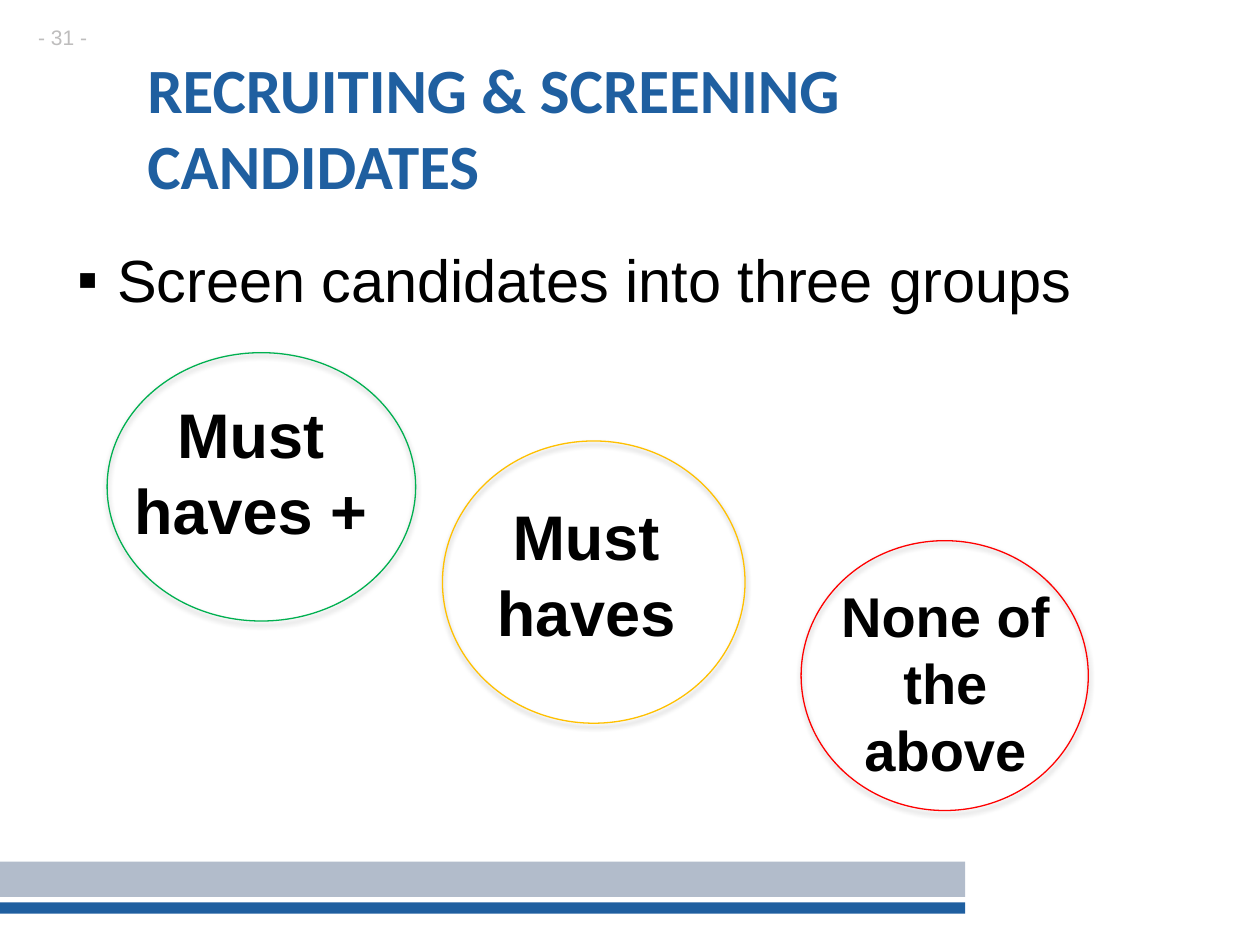
import dataclasses

import lxml.etree
import pptx
import pptx.dml.color
import pptx.enum.shapes
import pptx.enum.text
import pptx.oxml
import pptx.oxml.ns
import pptx.util

Cm = pptx.util.Cm
Pt = pptx.util.Pt
Align = pptx.enum.text.PP_ALIGN
Anchor = pptx.enum.text.MSO_ANCHOR
AutoSize = pptx.enum.text.MSO_AUTO_SIZE
Preset = pptx.enum.shapes.MSO_SHAPE


@dataclasses.dataclass(frozen=True)
class Theme:
    heading_font: str = "Calibri"
    body_font: str = "Arial"
    blue: str = "1F5FA0"
    grey_blue: str = "B2BCCB"
    pale_grey: str = "BEBDBD"
    black: str = "000000"
    green: str = "00B050"
    amber: str = "FFC000"
    red: str = "FF0000"
    heading_size: int = 36
    list_size: int = 34
    group_size: int = 36
    small_group_size: int = 32
    number_size: int = 12


THEME = Theme()


def colour(value):
    return pptx.dml.color.RGBColor.from_string(value)


def place(shape, box):
    shape.left, shape.top, shape.width, shape.height = (Cm(length) for length in box)


def set_frame(text_frame, anchor, margins):
    text_frame.word_wrap = True
    text_frame.auto_size = AutoSize.NONE
    text_frame.vertical_anchor = anchor
    (text_frame.margin_left, text_frame.margin_top,
     text_frame.margin_right, text_frame.margin_bottom) = (Cm(margin) for margin in margins)


def format_paragraph(paragraph, alignment, font_name, size, text_colour, bold=False):
    paragraph.alignment = alignment
    paragraph.space_before = Pt(0)
    for run in paragraph.runs:
        run.font.name = font_name
        run.font.size = Pt(size)
        run.font.bold = bold
        run.font.color.rgb = colour(text_colour)


def add_page_number(slide, box, text):
    shape = slide.shapes.add_textbox(*(Cm(length) for length in box))
    set_frame(shape.text_frame, Anchor.MIDDLE, (0, 0, 0, 0.13))
    shape.text_frame.text = text
    format_paragraph(shape.text_frame.paragraphs[0], Align.CENTER, THEME.body_font,
                     THEME.number_size, THEME.pale_grey)


def add_footer_bars(slide, box):
    left, top, width, height = box
    bars = ((0, 0.71, THEME.grey_blue), (height - 0.23, 0.23, THEME.blue))
    for offset, thickness, fill in bars:
        bar = slide.shapes.add_shape(Preset.RECTANGLE, Cm(left), Cm(top + offset),
                                     Cm(width), Cm(thickness))
        bar.shadow.inherit = False
        bar.fill.solid()
        bar.fill.fore_color.rgb = colour(fill)
        bar.line.fill.background()


def fill_title(slide, box, text):
    title = slide.shapes.title
    place(title, box)
    set_frame(title.text_frame, Anchor.TOP, (0, 0, 0.25, 0.13))
    title.text_frame.text = text
    format_paragraph(title.text_frame.paragraphs[0], Align.LEFT, THEME.heading_font,
                     THEME.heading_size, THEME.blue, bold=True)


def fill_list(slide, box, items):
    body = slide.placeholders[1]
    place(body, box)
    set_frame(body.text_frame, Anchor.TOP, (0, 0, 0.25, 0.13))
    body.text_frame.text = "\n".join(items)
    for paragraph in body.text_frame.paragraphs:
        properties = paragraph._p.get_or_add_pPr()
        properties.set("marL", str(Cm(0.79)))
        properties.set("indent", str(-Cm(0.79)))
        bullet = lxml.etree.SubElement(properties, pptx.oxml.ns.qn("a:buChar"))
        bullet.set("char", "▪")
        paragraph.line_spacing = 1.5
        format_paragraph(paragraph, Align.LEFT, THEME.body_font, THEME.list_size, THEME.black)


def add_soft_shadow(shape):
    effects = pptx.oxml.parse_xml(
        f'<a:effectLst {pptx.oxml.ns.nsdecls("a")}>'
        f'<a:outerShdw blurRad="{Pt(3.1)}" dist="{Pt(1.8)}" dir="5400000" rotWithShape="0">'
        f'<a:srgbClr val="{THEME.black}"><a:alpha val="35000"/></a:srgbClr>'
        '</a:outerShdw></a:effectLst>')
    shape.shadow.inherit = False
    empty_effects = shape._element.spPr.find(pptx.oxml.ns.qn("a:effectLst"))
    empty_effects.getparent().replace(empty_effects, effects)


def add_candidate_group(slide, box, label_box, text, outline, size):
    left, top, width, height = box
    label_left, label_top, label_width, label_height = label_box
    group = slide.shapes.add_group_shape()

    circle = group.shapes.add_shape(Preset.OVAL, Cm(left), Cm(top), Cm(width), Cm(height))
    circle.fill.background()
    circle.line.color.rgb = colour(outline)
    circle.line.width = Pt(0.75)
    add_soft_shadow(circle)

    label = group.shapes.add_textbox(Cm(left + label_left), Cm(top + label_top),
                                     Cm(label_width), Cm(label_height))
    label.text_frame.word_wrap = True
    label.text_frame.auto_size = AutoSize.SHAPE_TO_FIT_TEXT
    label.text_frame.text = text
    format_paragraph(label.text_frame.paragraphs[0], Align.CENTER, THEME.body_font,
                     size, THEME.black, bold=True)


def main():
    presentation = pptx.Presentation()
    presentation.slide_width = Cm(25.4)
    presentation.slide_height = Cm(19.05)
    slide = presentation.slides.add_slide(presentation.slide_layouts[1])

    add_page_number(slide, (0.48, 0.46, 1.57, 0.69), "- 31 -")
    add_footer_bars(slide, (0, 17.37, 19.46, 1.05))
    fill_title(slide, (2.97, 1.02, 21.16, 3.2), "RECRUITING & SCREENING CANDIDATES")
    fill_list(slide, (1.57, 4.19, 22.86, 12.88), ["Screen candidates into three groups"])

    candidate_groups = (
        ((2.16, 7.11, 6.22, 5.41), (0, 0.74, 5.79, 3.33),
         "Must haves +", THEME.green, THEME.group_size),
        ((8.92, 8.89, 6.1, 5.69), (0, 1.02, 5.79, 3.33),
         "Must haves", THEME.amber, THEME.group_size),
        ((16.15, 10.9, 5.79, 5.44), (0.46, 0.69, 4.9, 4.37),
         "None of the above", THEME.red, THEME.small_group_size),
    )
    for candidate_group in candidate_groups:
        add_candidate_group(slide, *candidate_group)

    presentation.save("out.pptx")


if __name__ == "__main__":
    main()
